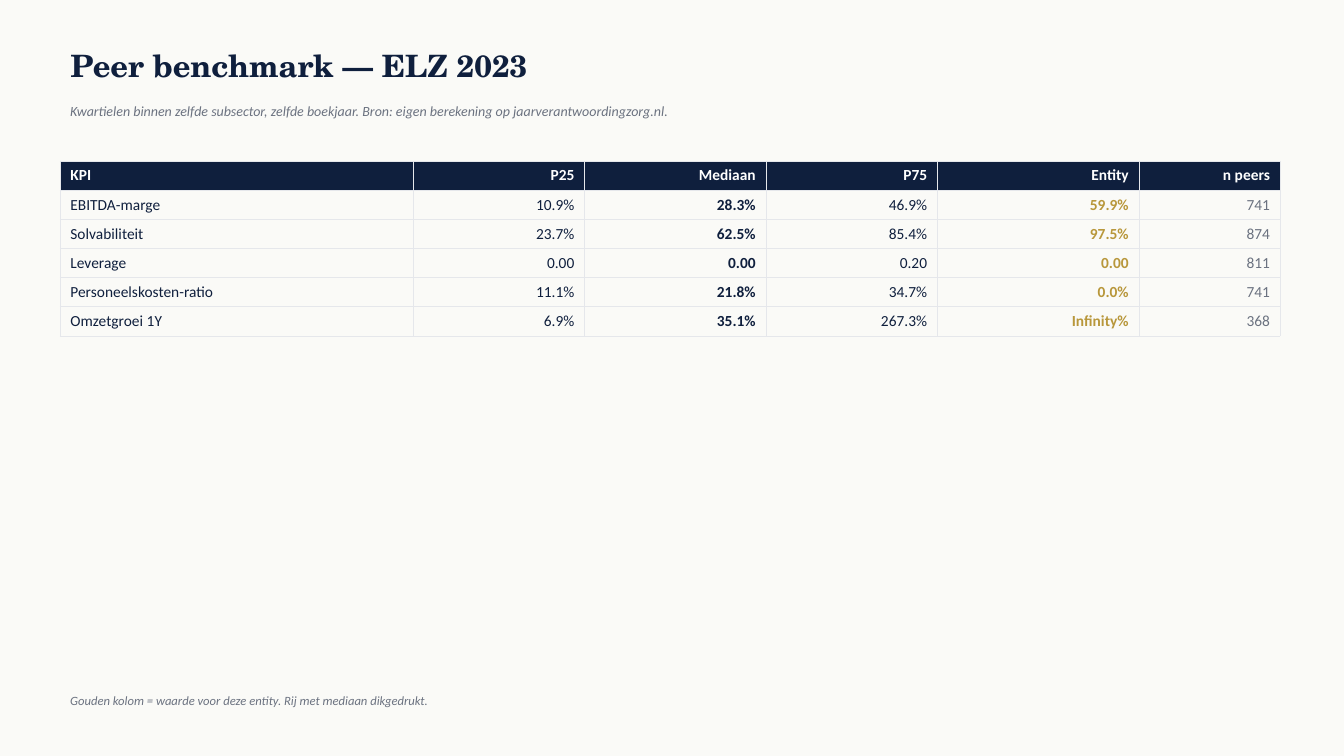
from pptx import Presentation
from pptx.dml.color import RGBColor
from pptx.enum.text import MSO_ANCHOR as Anchor, MSO_AUTO_SIZE as AutoSize, PP_ALIGN as Align
from pptx.oxml import parse_xml
from pptx.oxml.ns import nsdecls
from pptx.util import Cm, Pt

PAPER = RGBColor(0xFA, 0xFA, 0xF7)
NAVY = RGBColor(0x0F, 0x1F, 0x3D)
GRAY = RGBColor(0x6B, 0x72, 0x80)
GOLD = RGBColor(0xB8, 0x97, 0x3B)
WHITE = RGBColor(0xFF, 0xFF, 0xFF)
RULE = RGBColor(0xE5, 0xE7, 0xEB)

LEFT, TEXT_WIDTH = 1.52, 30.48
ROW_HEIGHT = 0.73
COLUMN_WIDTHS = (8.89, 4.32, 4.57, 4.32, 5.08, 3.56)
COLUMN_STYLES = ((NAVY, False), (NAVY, False), (NAVY, True),
                 (NAVY, False), (GOLD, True), (GRAY, False))
BENCHMARK = (
    ("KPI", "P25", "Mediaan", "P75", "Entity", "n peers"),
    ("EBITDA-marge", "10.9%", "28.3%", "46.9%", "59.9%", "741"),
    ("Solvabiliteit", "23.7%", "62.5%", "85.4%", "97.5%", "874"),
    ("Leverage", "0.00", "0.00", "0.20", "0.00", "811"),
    ("Personeelskosten-ratio", "11.1%", "21.8%", "34.7%", "0.0%", "741"),
    ("Omzetgroei 1Y", "6.9%", "35.1%", "267.3%", "Infinity%", "368"),
)


class BenchmarkSlide:
    """Hold the style and the current slide, and add its elements."""

    heading_font = "TeX Gyre Schola"
    body_font = "Calibri"

    def __init__(self, presentation):
        self.slide = presentation.slides.add_slide(presentation.slide_layouts[5])
        background = self.slide.background.fill
        background.solid()
        background.fore_color.rgb = PAPER

    def set_text(self, frame, text, size, color, name=body_font,
                 bold=False, italic=False, align=Align.LEFT):
        frame.text = text
        paragraph = frame.paragraphs[0]
        paragraph.alignment = align
        font = paragraph.font
        font.name, font.size, font.color.rgb = name, Pt(size), color
        font.bold, font.italic = bold, italic

    def frame(self, shape):
        frame = shape.text_frame
        frame.word_wrap = True
        frame.auto_size = AutoSize.NONE
        frame.vertical_anchor = Anchor.MIDDLE
        return frame

    def title(self, text, top, height):
        shape = self.slide.shapes.title
        shape.left, shape.top = Cm(LEFT), Cm(top)
        shape.width, shape.height = Cm(TEXT_WIDTH), Cm(height)
        self.set_text(self.frame(shape), text, 22, NAVY, self.heading_font, bold=True)

    def note(self, text, top, size):
        shape = self.slide.shapes.add_textbox(
            Cm(LEFT), Cm(top), Cm(TEXT_WIDTH), Cm(0.76))
        self.set_text(self.frame(shape), text, size, GRAY, italic=True)

    def border(self, cell):
        properties = cell._tc.get_or_add_tcPr()
        for index, side in enumerate(("lnL", "lnR", "lnT", "lnB")):
            properties.insert(index, parse_xml(
                f'<a:{side} {nsdecls("a")} w="{Pt(0.5)}"><a:solidFill>'
                f'<a:srgbClr val="{RULE}"/></a:solidFill></a:{side}>'))

    def table(self, rows, top):
        table = self.slide.shapes.add_table(
            len(rows), len(COLUMN_WIDTHS), Cm(LEFT), Cm(top),
            Cm(sum(COLUMN_WIDTHS)), Cm(ROW_HEIGHT * len(rows))).table
        table.horz_banding = False
        for column, width in zip(table.columns, COLUMN_WIDTHS):
            column.width = Cm(width)
        for row_index, values in enumerate(rows):
            for column_index, value in enumerate(values):
                cell = table.cell(row_index, column_index)
                color, bold = COLUMN_STYLES[column_index]
                if row_index == 0:
                    color, bold = WHITE, True
                    cell.fill.solid()
                    cell.fill.fore_color.rgb = NAVY
                else:
                    cell.fill.background()
                align = Align.RIGHT if column_index else Align.LEFT
                self.set_text(cell.text_frame, value, 11, color, bold=bold, align=align)
                self.border(cell)


def main():
    presentation = Presentation()
    presentation.slide_width, presentation.slide_height = Cm(33.87), Cm(19.05)
    benchmark = BenchmarkSlide(presentation)
    benchmark.title("Peer benchmark — ELZ 2023", 1.02, 1.27)
    benchmark.note("Kwartielen binnen zelfde subsector, zelfde boekjaar. "
                   "Bron: eigen berekening op jaarverantwoordingzorg.nl.", 2.41, 10)
    benchmark.table(BENCHMARK, 4.06)
    benchmark.note("Gouden kolom = waarde voor deze entity. "
                   "Rij met mediaan dikgedrukt.", 17.27, 9)
    presentation.save("out.pptx")


if __name__ == "__main__":
    main()
